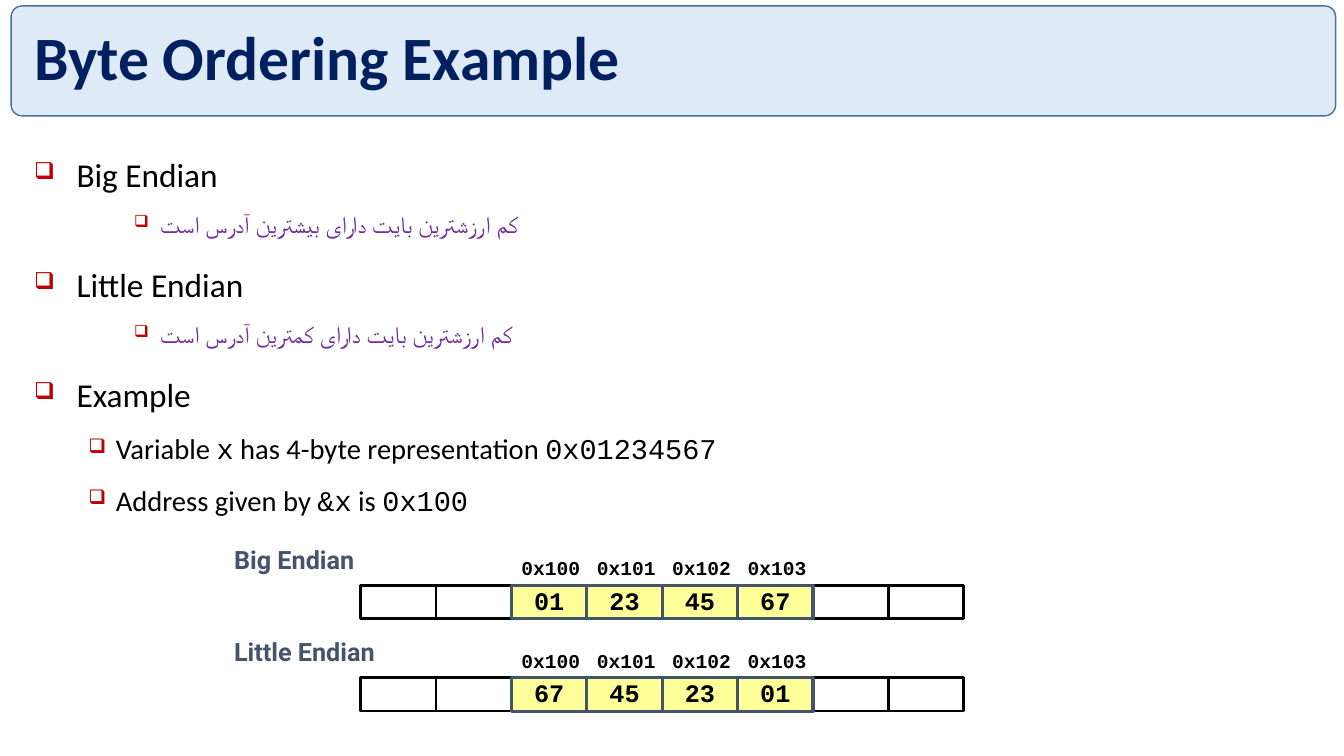
from lxml.etree import SubElement
from pptx import Presentation
from pptx.dml.color import RGBColor
from pptx.enum.shapes import MSO_SHAPE
from pptx.enum.text import MSO_ANCHOR, PP_ALIGN
from pptx.oxml.ns import qn
from pptx.util import Cm, Pt

BLACK = RGBColor(0x00, 0x00, 0x00)
WHITE = RGBColor(0xFF, 0xFF, 0xFF)
BANNER_FILL = RGBColor(0xDE, 0xEB, 0xF7)
BANNER_LINE = RGBColor(0x43, 0x73, 0x9E)
NAVY = RGBColor(0x00, 0x20, 0x60)
RED = RGBColor(0xC0, 0x00, 0x00)
PURPLE = RGBColor(0x70, 0x30, 0xA0)
SLATE = RGBColor(0x44, 0x54, 0x6A)
YELLOW = RGBColor(0xFF, 0xFF, 0x99)

SANS, MONO, LABEL_FONT = "Calibri", "Courier New", "Roboto"

# level: (left margin, hanging indent, space before, size, colour)
LEVELS = {
    0: (1.07, 1.07, 10, 23.8, BLACK),
    1: (2.06, 0.69, 5, 20.4, BLACK),
    2: (3.18, 0.66, 5, 17, PURPLE),
}
OUTLINE = [
    (0, [("Big Endian", SANS)]),
    (2, [("کم ارزشترین بایت دارای بیشترین آدرس است", SANS)]),
    (0, [("Little Endian", SANS)]),
    (2, [("کم ارزشترین بایت دارای کمترین آدرس است", SANS)]),
    (0, [("Example", SANS)]),
    (1, [("Variable ", SANS), ("x", MONO),
         (" has 4-byte representation ", SANS), ("0x01234567", MONO)]),
    (1, [("Address given by ", SANS), ("&x", MONO), (" is ", SANS), ("0x100", MONO)]),
]
ADDRESSES = ["0x100", "0x101", "0x102", "0x103"]
BYTES = ["01", "23", "45", "67"]
CELL_COUNT, FIRST_BYTE = 8, 2
CELL_WIDTH, CELL_HEIGHT = 1.9, 0.84


def style_run(run, size, font_name, colour, bold=False):
    """Set the size, typeface, colour and weight of a run."""
    run.font.size = Pt(size)
    run.font.name = font_name
    run.font.color.rgb = colour
    run.font.bold = bold


def add_text(slide, box, text, size, font_name, colour, line_spacing):
    """Add a wrapping text box with one bold line and return its frame."""
    text_frame = slide.shapes.add_textbox(*map(Cm, box)).text_frame
    text_frame.word_wrap = True
    text_frame.text = text
    paragraph = text_frame.paragraphs[0]
    paragraph.line_spacing = line_spacing
    style_run(paragraph.runs[0], size, font_name, colour, bold=True)
    return text_frame


def add_box(slide, kind, box, fill, line=None, line_width=1):
    """Add a flat shape with an optional outline."""
    shape = slide.shapes.add_shape(kind, *map(Cm, box))
    shape.shadow.inherit = False
    shape.fill.solid()
    shape.fill.fore_color.rgb = fill
    if line is None:
        shape.line.fill.background()
    else:
        shape.line.color.rgb = line
        shape.line.width = Pt(line_width)
    return shape


def add_cell(slide, left, top, fill, line=None, line_width=1, text="", size=18,
             alignment=PP_ALIGN.LEFT, inset=0.25, line_spacing=1.0):
    """Add one memory cell or the address above it."""
    box = (left, top, CELL_WIDTH, CELL_HEIGHT)
    text_frame = add_box(slide, MSO_SHAPE.RECTANGLE, box, fill, line, line_width).text_frame
    if not text:
        return
    text_frame.word_wrap = False
    text_frame.vertical_anchor = MSO_ANCHOR.MIDDLE
    text_frame.margin_left = text_frame.margin_right = Cm(inset)
    text_frame.margin_top = text_frame.margin_bottom = Cm(0.13)
    text_frame.text = text
    paragraph = text_frame.paragraphs[0]
    paragraph.alignment = alignment
    paragraph.line_spacing = line_spacing
    style_run(paragraph.runs[0], size, MONO, BLACK, bold=True)


def add_bullet(paragraph, margin, hanging):
    """Give a paragraph a red box bullet with a hanging indent."""
    properties = paragraph._p.get_or_add_pPr()
    properties.set("marL", str(Cm(margin)))
    properties.set("indent", str(-Cm(hanging)))
    colour = SubElement(properties, qn("a:buClr"))
    SubElement(colour, qn("a:srgbClr"), val=str(RED))
    SubElement(properties, qn("a:buSzPct"), val="70000")
    SubElement(properties, qn("a:buChar"), char="❑")


def add_banner(slide, left, top, width, height):
    """Add the rounded banner and its title."""
    banner = add_box(slide, MSO_SHAPE.ROUNDED_RECTANGLE, (left, top, width, height),
                     BANNER_FILL, BANNER_LINE)
    banner.adjustments[0] = 0.1
    title_box = (left + 0.33, top + 0.23, width - 1.91, height - 0.48)
    text_frame = add_text(slide, title_box, "Byte Ordering Example", 44, SANS, NAVY, 0.9)
    text_frame.vertical_anchor = MSO_ANCHOR.MIDDLE


def add_outline(slide, left, top, width, height):
    """Add the bulleted outline."""
    text_frame = slide.shapes.add_textbox(*map(Cm, (left, top, width, height))).text_frame
    text_frame.word_wrap = True
    for index, (level, pieces) in enumerate(OUTLINE):
        paragraph = text_frame.add_paragraph() if index else text_frame.paragraphs[0]
        margin, hanging, space_before, size, colour = LEVELS[level]
        paragraph.level = level
        paragraph.line_spacing = 1.3
        paragraph.space_before = Pt(space_before)
        add_bullet(paragraph, margin, hanging)
        for text, font_name in pieces:
            run = paragraph.add_run()
            run.text = text
            style_run(run, size, font_name, colour)


def add_memory_row(slide, left, top, label, byte_values):
    """Add a labelled strip of memory cells with addresses above the bytes."""
    cell_lefts = [left + 3.37 + index * CELL_WIDTH for index in range(CELL_COUNT)]
    byte_lefts = cell_lefts[FIRST_BYTE:FIRST_BYTE + len(byte_values)]
    cell_top = top + 1.06
    for address, cell_left in zip(ADDRESSES, byte_lefts):
        add_cell(slide, cell_left, top + 0.2, WHITE, text=address, size=14)
    for cell_left in cell_lefts:
        if cell_left not in byte_lefts:
            add_cell(slide, cell_left, cell_top, WHITE, BLACK, 2)
    text_frame = add_text(slide, (left, top, 4.95, 0.86), label, 18, LABEL_FONT, SLATE, 0.95)
    text_frame.margin_left = text_frame.margin_right = Cm(0.18)
    text_frame.margin_top = text_frame.margin_bottom = Cm(0.08)
    for value, cell_left in zip(byte_values, byte_lefts):
        add_cell(slide, cell_left, cell_top, YELLOW, SLATE, 2.25, value,
                 alignment=PP_ALIGN.CENTER, inset=0.13, line_spacing=0.9)


def main():
    """Build the slide and save it."""
    presentation = Presentation()
    presentation.slide_width, presentation.slide_height = Cm(33.87), Cm(19.05)
    slide = presentation.slides.add_slide(presentation.slide_layouts[6])
    add_banner(slide, 0.28, 0.15, 33.38, 2.77)
    add_outline(slide, 0.61, 3.45, 31.47, 9.83)
    add_memory_row(slide, 5.72, 13.69, "Big Endian", BYTES)
    add_memory_row(slide, 5.72, 16.02, "Little Endian", BYTES[::-1])
    presentation.save("out.pptx")


if __name__ == "__main__":
    main()
